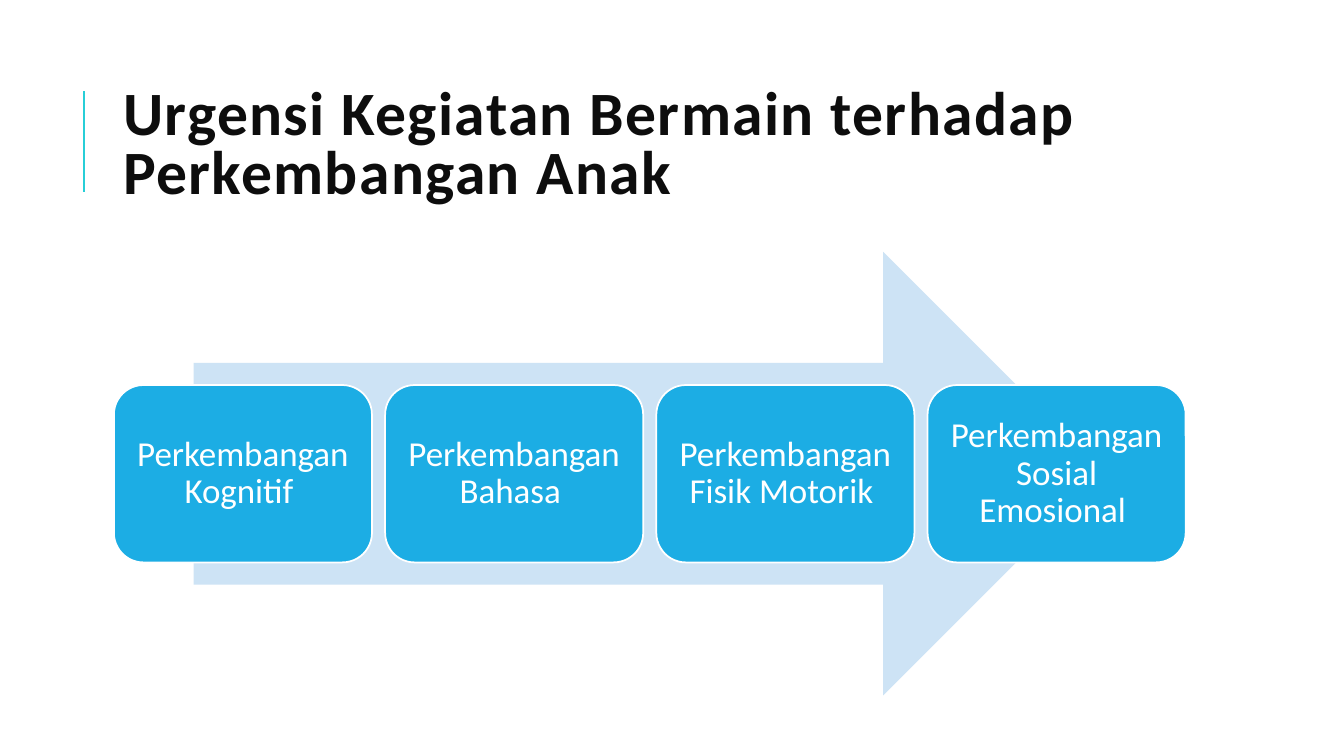
from pptx import Presentation
from pptx import util as u
from pptx.dml.color import RGBColor
from pptx.enum import shapes, text
from pptx.oxml.ns import qn
from lxml import etree

INK = RGBColor(0x0D, 0x0D, 0x0D)
WHITE = RGBColor(0xFF, 0xFF, 0xFF)
TEAL = RGBColor(0x27, 0xCE, 0xD7)
BLUE = RGBColor(0x1C, 0xAD, 0xE4)
PALE_BLUE = RGBColor(0xCD, 0xE3, 0xF5)

WIDTH, HEIGHT = 13.33, 7.5
GRID_LEFT, COLUMN, CARD_WIDTH = 1.13, 2.69, 2.56
CARD_TOP, CARD_HEIGHT = 3.82, 1.76
ASPECTS = ["Kognitif", "Bahasa", "Fisik Motorik", "Sosial Emosional"]


class Deck:
    """Hold the style and the current slide, and draw each kind of element."""

    font = "Calibri"

    def __init__(self):
        self.prs = Presentation()
        self.prs.slide_width = u.Inches(WIDTH)
        self.prs.slide_height = u.Inches(HEIGHT)
        self.s = self.prs.slides.add_slide(self.prs.slide_layouts[5])

    def label(self, tf, words, size, color, align, spacing, bold=False):
        tf.word_wrap = True
        tf.vertical_anchor = text.MSO_ANCHOR.MIDDLE
        p = tf.paragraphs[0]
        r = p.add_run()
        r.text = words
        p.alignment, p.line_spacing = align, spacing
        p.font.name, p.font.size, p.font.bold = self.font, u.Pt(size), bold
        p.font.color.rgb = color
        return r

    def title(self, words, left, top, width, height):
        sp = self.s.shapes.title
        sp.left, sp.top = u.Inches(left), u.Inches(top)
        sp.width, sp.height = u.Inches(width), u.Inches(height)
        sp.text_frame.auto_size = text.MSO_AUTO_SIZE.NONE
        r = self.label(sp.text_frame, words, 44, INK, text.PP_ALIGN.LEFT, 0.8, True)
        r.font._element.set("spc", "100")

    def rule(self, x, top, bottom):
        ends = [u.Inches(v) for v in (x, bottom, x, top)]
        line = self.s.shapes.add_connector(shapes.MSO_CONNECTOR.STRAIGHT, *ends)
        line.line.color.rgb, line.line.width = TEAL, u.Pt(1.5)
        etree.SubElement(line._element.spPr, qn("a:effectLst"))

    def shape(self, kind, fill, left, top, width, height):
        box = [u.Inches(v) for v in (left, top, width, height)]
        sp = self.s.shapes.add_shape(kind, *box)
        sp.shadow.inherit = False
        sp.fill.solid()
        sp.fill.fore_color.rgb = fill
        sp.line.fill.background()
        return sp

    def card(self, column, words):
        sp = self.shape(shapes.MSO_SHAPE.ROUNDED_RECTANGLE, BLUE,
                        GRID_LEFT + column * COLUMN, CARD_TOP, CARD_WIDTH, CARD_HEIGHT)
        sp.line.color.rgb, sp.line.width = WHITE, u.Pt(1.25)
        tf = sp.text_frame
        tf.margin_left = tf.margin_right = tf.margin_top = tf.margin_bottom = u.Inches(0.1)
        self.label(tf, words, 25, WHITE, text.PP_ALIGN.CENTER, 0.9)


def main():
    deck = Deck()
    deck.rule(0.83, 0.9, 1.9)
    deck.title("Urgensi Kegiatan Bermain terhadap Perkembangan Anak", 1.12, 0.64, 10.63, 1.64)
    deck.shape(shapes.MSO_SHAPE.RIGHT_ARROW, PALE_BLUE, 1.92, 2.5, 9.04, 4.4)
    for column, aspect in enumerate(ASPECTS):
        deck.card(column, f"Perkembangan {aspect} ")
    deck.prs.save("out.pptx")


if __name__ == "__main__":
    main()
